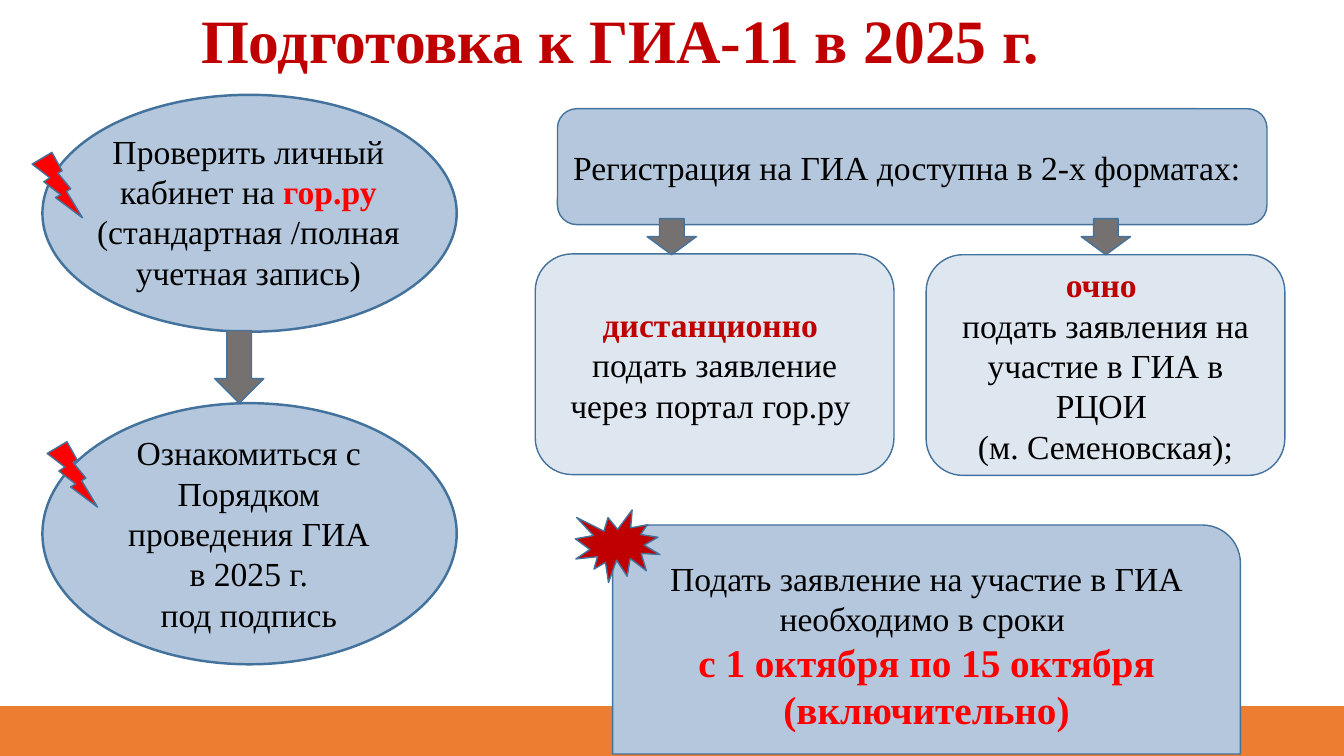
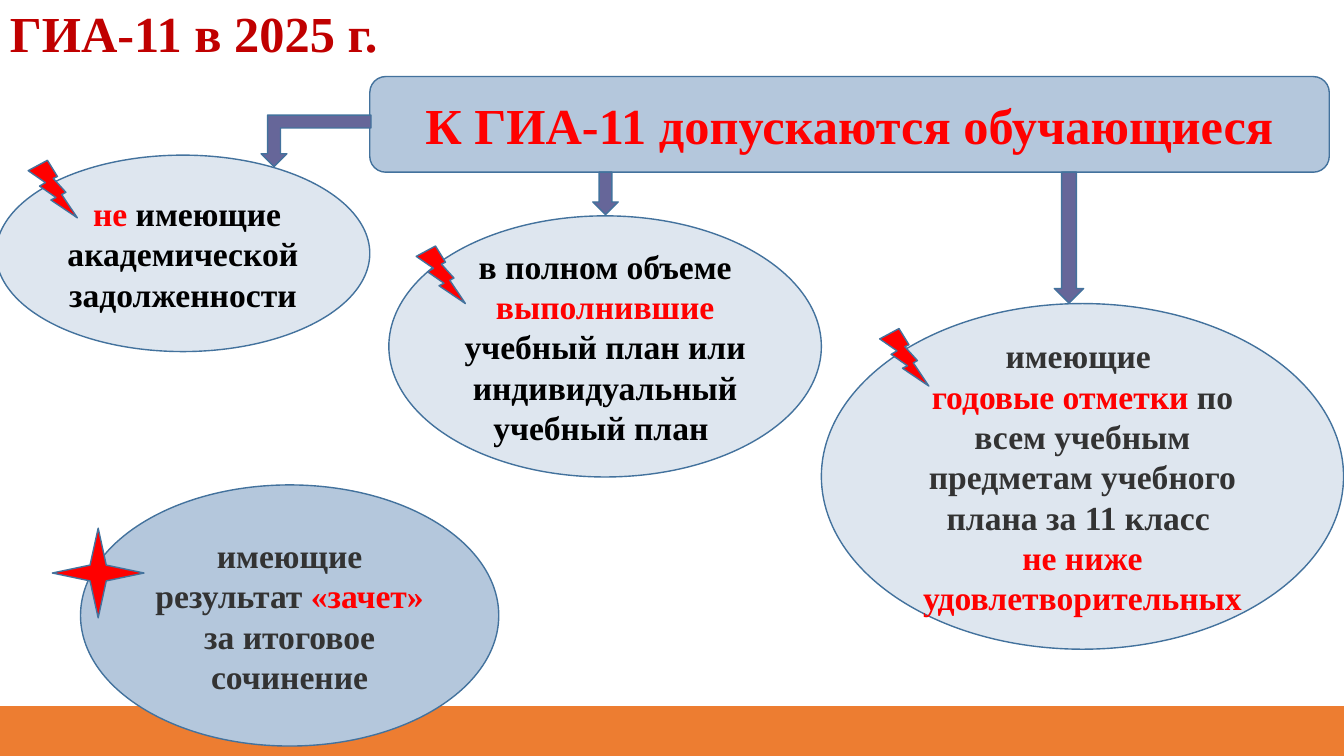
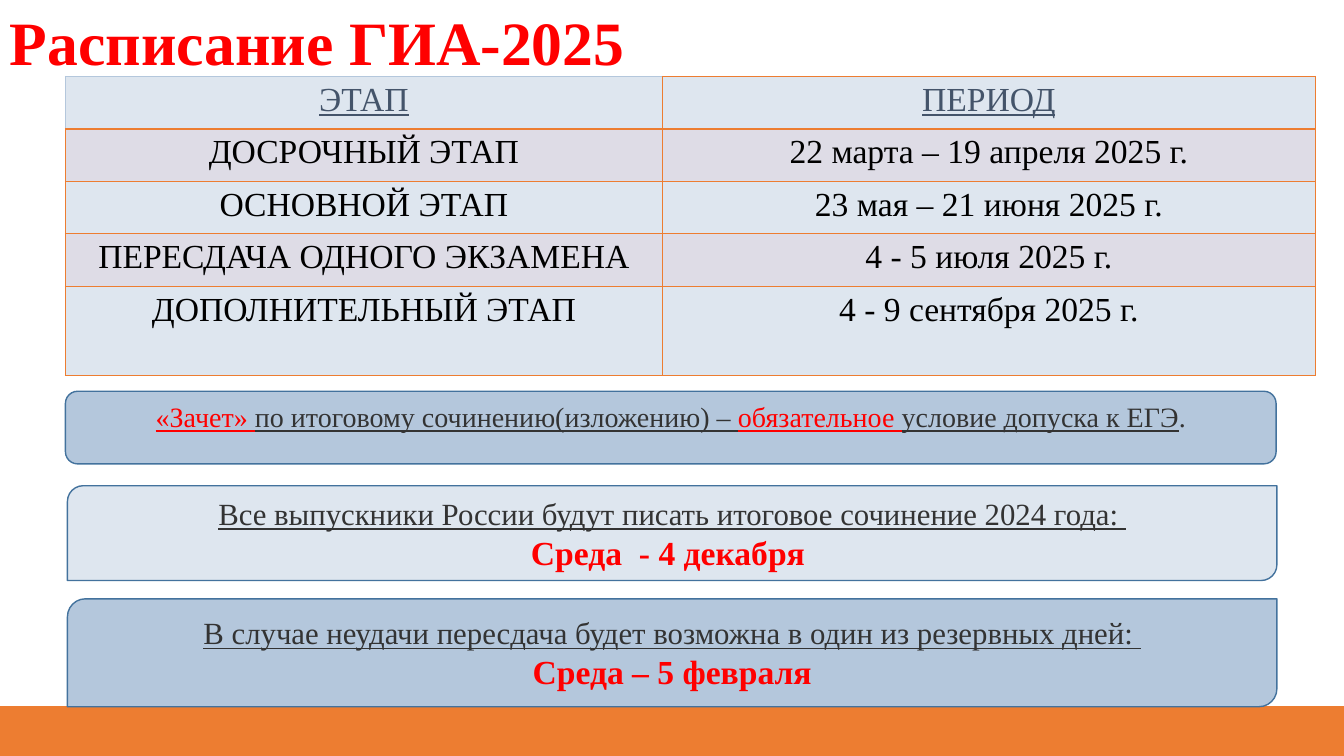
from lxml import etree
from pptx import Presentation
from pptx.dml.color import RGBColor
from pptx.enum.shapes import MSO_SHAPE
from pptx.enum.text import MSO_ANCHOR, PP_ALIGN
from pptx.oxml.ns import qn
from pptx.util import Cm, Pt

OVAL = MSO_SHAPE.OVAL
RECT = MSO_SHAPE.RECTANGLE
ROUND = MSO_SHAPE.ROUNDED_RECTANGLE
TAB = MSO_SHAPE.ROUND_2_SAME_RECTANGLE
DIAG = MSO_SHAPE.ROUND_2_DIAG_RECTANGLE
DOWN = MSO_SHAPE.DOWN_ARROW
BENT = MSO_SHAPE.BENT_UP_ARROW
BOLT = MSO_SHAPE.LIGHTNING_BOLT
BURST = MSO_SHAPE.EXPLOSION1
STAR = MSO_SHAPE.STAR_4_POINT
LEFT, MID = PP_ALIGN.LEFT, PP_ALIGN.CENTER
TOP, CENTER = MSO_ANCHOR.TOP, MSO_ANCHOR.MIDDLE

FONT = "Times New Roman"
COLORS = {
    "blue": "B4C7DC", "pale": "DEE6EF", "lilac": "DEDCE6", "edge": "43729D",
    "orange": "ED7D31", "gray": "767171", "violet": "666699", "slate": "44546A",
    "wine": "C00000", "red": "FF0000", "black": "000000", "dark": "333333",
}


def color(name):
    return RGBColor.from_string(COLORS[name])


class Deck:
    """Holds the shared style and the slide being filled."""

    def __init__(self):
        self.prs = Presentation()
        self.prs.slide_width, self.prs.slide_height = Cm(33.87), Cm(19.05)
        self.slide = None

    def page(self, title, box, size=44, tint="wine", align=LEFT):
        self.slide = self.prs.slides.add_slide(self.prs.slide_layouts[6])
        self.shape(RECT, (0, 17.81, 33.87, 1.24), "orange", edge="orange")
        frame = self.text(box, [[(title, tint, "b", size)]], align, CENTER)
        frame.paragraphs[0].line_spacing = 0.9

    def put(self, frame, paras, align=MID, anchor=CENTER):
        """Fill a frame; a run is (text, colour, flags b/u, size)."""
        frame.word_wrap = True
        frame.vertical_anchor = anchor
        for i, runs in enumerate(paras):
            para = frame.paragraphs[0] if i == 0 else frame.add_paragraph()
            para.alignment = align
            for words, tint, *rest in runs:
                flags, size = rest + ["", 24][len(rest):]
                run = para.add_run()
                run.text = words
                font = run.font
                font.name, font.size = FONT, Pt(size)
                font.bold, font.underline = "b" in flags, "u" in flags
                font.color.rgb = color(tint)

    def text(self, box, paras, align=MID, anchor=TOP):
        frame = self.slide.shapes.add_textbox(*map(Cm, box)).text_frame
        self.put(frame, paras, align, anchor)
        return frame

    def shape(self, kind, box, fill, paras=(), align=MID, anchor=CENTER,
              edge="edge", width=1):
        item = self.slide.shapes.add_shape(kind, *map(Cm, box))
        item.shadow.inherit = False
        item.fill.solid()
        item.fill.fore_color.rgb = color(fill)
        item.line.color.rgb = color(edge)
        item.line.width = Pt(width)
        self.put(item.text_frame, paras, align, anchor)
        return item

    def marks(self, kind, size, fill, spots):
        """Repeat one small sign at several places."""
        for spot in spots:
            self.shape(kind, spot + size, fill)

    def edges(self, cell, tints):
        """Draw cell borders in the order left, right, top, bottom."""
        props = cell._tc.get_or_add_tcPr()
        for side, tint in zip("LRTB", tints):
            line = etree.SubElement(props, qn("a:ln" + side), w="12192")
            fill = etree.SubElement(line, qn("a:solidFill"))
            etree.SubElement(fill, qn("a:srgbClr"), val=COLORS[tint])

    def table(self, spot, cols, highs, rows):
        box = spot + (sum(cols), sum(highs))
        grid = self.slide.shapes.add_table(
            len(rows), len(cols), *map(Cm, box)).table
        grid.first_row = grid.horz_banding = False
        for col, wide in zip(grid.columns, cols):
            col.width = Cm(wide)
        for i, (row, high) in enumerate(zip(rows, highs)):
            grid.rows[i].height = Cm(high)
            style = ("black", "") if i else ("slate", "u")
            for j, words in enumerate(row):
                cell = grid.cell(i, j)
                self.put(cell.text_frame, [[(words, *style)]])
                cell.vertical_anchor = TOP
                first = "blue" if i == j == 0 else "orange"
                self.edges(cell, (first, "orange", first, "orange"))
                cell.fill.solid()
                cell.fill.fore_color.rgb = color("lilac" if i % 2 else "pale")


def prepare(deck):
    deck.page("Подготовка к ГИА-11 в 2025 г.", (0.81, 0, 29.64, 2.18), align=MID)
    deck.shape(OVAL, (1.07, 2.39, 10.44, 5.97), "blue", width=1.75)
    deck.text((2.08, 3.17, 8.36, 4.32), [[
        ("Проверить личный кабинет на ", "black"), ("гор.ру ", "red", "b"),
        ("(стандартная /полная учетная запись)", "black")]])
    deck.shape(OVAL, (1.07, 10.16, 10.44, 6.58), "blue", width=1.75)
    deck.text((2.64, 10.77, 7.26, 5.33), [
        [("Ознакомиться с Порядком проведения ГИА", "black")],
        [("в 2025 г.", "black")], [("под подпись", "black")]])
    deck.shape(DOWN, (5.41, 8.33, 1.24, 1.83), "gray")

    deck.shape(ROUND, (14.05, 2.74, 17.88, 2.92), "blue", [
        [("Регистрация на ГИА доступна в 2-х форматах:", "black")]], LEFT)
    deck.shape(ROUND, (13.49, 6.4, 9.04, 5.56), "pale", [
        [("дистанционно ", "wine", "b")],
        [("подать заявление через портал гор.ру ", "black")]])
    deck.shape(ROUND, (23.34, 6.42, 9.04, 5.56), "pale", [
        [("очно ", "wine", "b")],
        [("подать заявления на участие в ГИА в РЦОИ ", "black")],
        [("(м. Семеновская);", "black")]])
    deck.marks(DOWN, (1.24, 0.91), "gray", [(16.31, 5.51), (27.25, 5.51)])

    deck.shape(TAB, (15.44, 13.23, 15.82, 5.77), "blue", [
        [("Подать заявление на участие в ГИА необходимо в сроки ", "black")],
        [("с 1 октября по 15 октября (включительно)", "red", "b", 28)]])
    deck.shape(BURST, (14.5, 12.85, 2.13, 1.83), "wine")
    deck.marks(BOLT, (1.27, 1.65), "red", [(1.19, 11.13), (0.81, 3.84)])


def admit(deck):
    deck.page("ГИА-11 в 2025 г.", (0, 0.05, 29.64, 1.75), 36)
    deck.shape(ROUND, (9.32, 1.93, 24.18, 2.41), "blue", [
        [("К ГИА-11 допускаются обучающиеся", "red", "b", 36)]])
    deck.shape(OVAL, (-0.1, 3.91, 9.42, 4.95), "pale", [[
        (" не ", "red", "b"),
        ("имеющие академической задолженности", "black", "b")]])
    deck.shape(OVAL, (9.8, 5.44, 10.9, 6.58), "pale", [[
        ("в полном объеме ", "black", "b"), ("выполнившие ", "red", "b"),
        ("учебный план или индивидуальный учебный план ", "black", "b")]])
    deck.shape(OVAL, (20.7, 7.65, 13.16, 8.71), "pale", [
        [("имеющие ", "dark", "b")],
        [("годовые отметки ", "red", "b"),
         ("по всем учебным предметам учебного плана за 11 класс ", "dark", "b")],
        [("не ниже удовлетворительных", "red", "b")]])
    deck.shape(OVAL, (2.03, 12.22, 10.54, 6.58), "blue", [[
        ("имеющие результат ", "dark", "b"), ("«зачет» ", "red", "b"),
        ("за итоговое сочинение", "dark", "b")]])
    deck.marks(BOLT, (1.24, 1.45), "red",
               [(0.71, 4.04), (10.49, 6.2), (22.17, 8.28)])
    deck.shape(STAR, (1.32, 13.31, 2.31, 2.26), "red")
    deck.shape(BENT, (6.58, 2.9, 2.77, 1.3), "violet").rotation = 180
    deck.shape(DOWN, (14.94, 4.34, 0.64, 1.07), "violet")
    deck.shape(DOWN, (26.57, 4.34, 0.74, 3.3), "violet")


def dates(deck):
    deck.page("Расписание ГИА-2025", (0, 0.08, 23.88, 2.16), tint="red")
    deck.table((1.65, 1.93), (15.04, 16.46), [1.32] * 4 + [2.26], [
        ("ЭТАП", "ПЕРИОД"),
        ("ДОСРОЧНЫЙ ЭТАП", "22 марта – 19 апреля 2025 г."),
        ("ОСНОВНОЙ ЭТАП", "23 мая – 21 июня 2025 г."),
        ("ПЕРЕСДАЧА ОДНОГО ЭКЗАМЕНА", "4 - 5 июля 2025 г."),
        ("ДОПОЛНИТЕЛЬНЫЙ ЭТАП", "4 - 9 сентября 2025 г.")])
    deck.shape(ROUND, (1.65, 9.86, 30.51, 1.83), "blue", [[
        ("«Зачет» ", "red", "u", 20),
        ("по итоговому сочинению(изложению) – ", "dark", "u", 20),
        ("обязательное ", "red", "u", 20),
        ("условие допуска к ЕГЭ", "dark", "u", 20),
        (".", "dark", "", 20)]], anchor=TOP)
    for top, high, fill, lead, day in (
            (12.24, 2.39, "pale",
             "Все выпускники России будут писать итоговое сочинение 2024 года: ",
             "Среда  - 4 декабря "),
            (15.09, 2.72, "blue",
             "В случае неудачи пересдача будет возможна в один из резервных дней: ",
             "Среда – 5 февраля")):
        deck.shape(DIAG, (1.7, top, 30.48, high), fill, [
            [(lead, "dark", "u", 22)], [(day, "red", "b")]])


def main():
    deck = Deck()
    for build in (prepare, admit, dates):
        build(deck)
    deck.prs.save("out.pptx")


if __name__ == "__main__":
    main()
